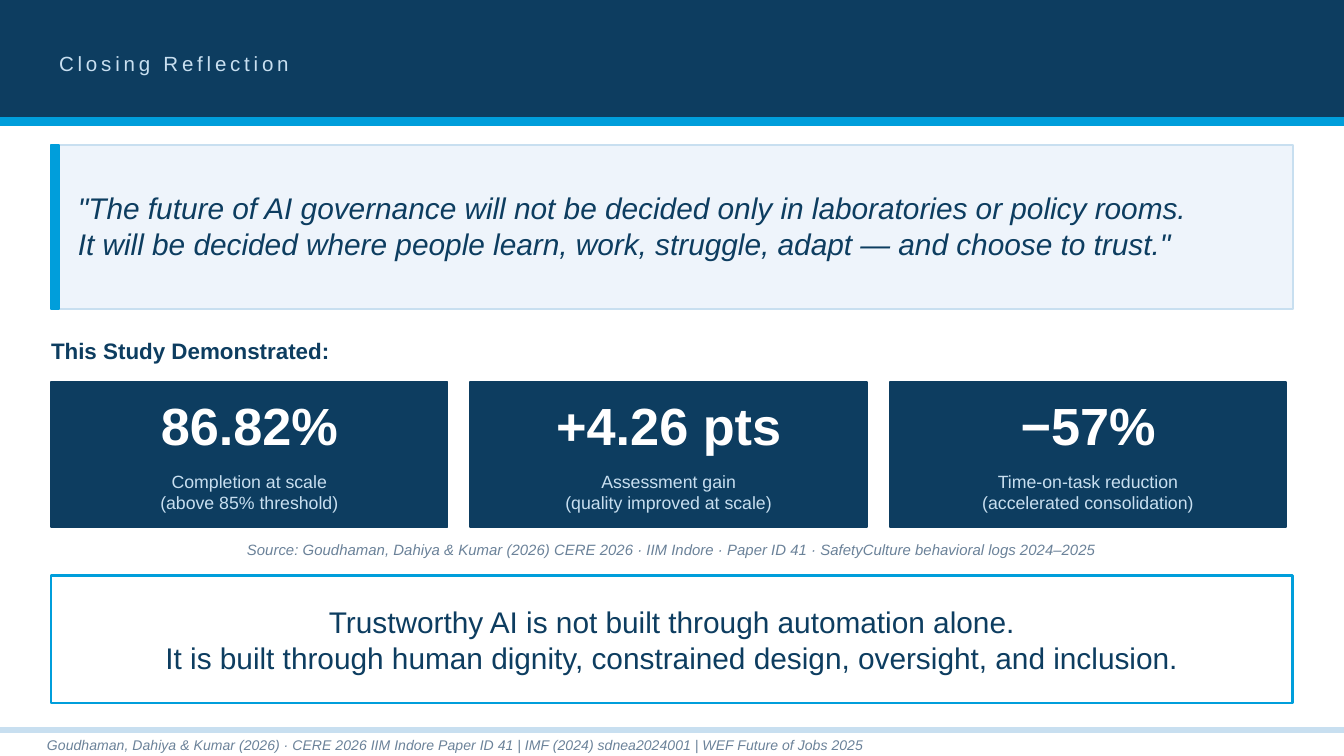
from dataclasses import dataclass

from pptx import Presentation
from pptx.dml.color import RGBColor
from pptx.enum.shapes import MSO_SHAPE
from pptx.enum.text import MSO_ANCHOR, PP_ALIGN
from pptx.util import Inches, Pt


@dataclass(frozen=True)
class Theme:
    font: str = "Arial"
    navy: str = "0D3D60"
    blue: str = "009EDB"
    pale: str = "C8DFF0"
    mist: str = "EEF4FB"
    white: str = "FFFFFF"
    slate: str = "6B8299"
    figure: float = 28
    statement: float = 16
    heading: float = 12
    title: float = 11
    label: float = 9.5
    source: float = 8
    footer: float = 7.5


class SlideBuilder:
    """Places elements on a grid of 100 columns, with square cells."""

    def __init__(self, presentation, theme):
        self.theme = theme
        self.cell = presentation.slide_width / 100
        self.slide = presentation.slides.add_slide(presentation.slide_layouts[6])

    def place(self, area):
        return [round(length * self.cell) for length in area]

    def box(self, area, fill, line=None, line_width=1):
        shape = self.slide.shapes.add_shape(MSO_SHAPE.RECTANGLE, *self.place(area))
        shape.shadow.inherit = False
        shape.fill.solid()
        shape.fill.fore_color.rgb = RGBColor.from_string(fill)
        shape.line.color.rgb = RGBColor.from_string(line or fill)
        shape.line.width = Pt(line_width)

    def text(self, area, lines, size, color, bold=False, italic=False,
             align=PP_ALIGN.LEFT, spacing=0):
        """Write one paragraph per line; spacing is the letter spacing in points."""
        frame = self.slide.shapes.add_textbox(*self.place(area)).text_frame
        frame.word_wrap = True
        frame.vertical_anchor = MSO_ANCHOR.MIDDLE
        frame.margin_left = frame.margin_top = frame.margin_right = frame.margin_bottom = 0
        frame.text = "\n".join(lines)
        for paragraph in frame.paragraphs:
            paragraph.alignment = align
            font = paragraph.font
            font.name, font.size = self.theme.font, Pt(size)
            font.bold, font.italic = bold, italic
            font.color.rgb = RGBColor.from_string(color)
            if spacing:
                for run in paragraph.runs:
                    run._r.get_or_add_rPr().set("spc", str(spacing * 100))

    def header(self, title):
        theme = self.theme
        self.box((0, 0, 100, 8.8), theme.navy)
        self.box((0, 8.8, 100, 0.55), theme.blue)
        self.text((4.4, 2.7, 64, 4), [title], theme.title, theme.pale, spacing=2)

    def quote(self, lines):
        theme = self.theme
        left, top, height = 3.8, 10.8, 12.2
        self.box((left, top, 92.4, height), theme.mist, theme.pale)
        self.box((left, top, 0.6, height), theme.blue)
        self.text((left + 2, top + 0.2, 89, height - 0.6), lines,
                  theme.statement, theme.navy, italic=True)

    def statistic_card(self, index, figure, label_lines):
        theme = self.theme
        width, gap, top = 29.5, 1.7, 28.4
        left = 3.8 + index * (width + gap)
        self.box((left, top, width, 10.85), theme.navy)
        self.text((left, top + 0.2, width, 6), [figure], theme.figure, theme.white,
                  bold=True, align=PP_ALIGN.CENTER)
        self.text((left, top + 6, width, 4.4), label_lines, theme.label, theme.pale,
                  align=PP_ALIGN.CENTER)

    def conclusion(self, lines):
        theme = self.theme
        area = (3.8, 42.82, 92.4, 9.5)
        self.box(area, theme.white, theme.blue, 1.5)
        self.text(area, lines, theme.statement, theme.navy, align=PP_ALIGN.CENTER)

    def footer(self, reference):
        theme = self.theme
        self.box((0, 54.2, 100, 0.3), theme.pale)
        self.text((3.5, 54.5, 93, 1.8), [reference], theme.footer, theme.slate, italic=True)


STATISTICS = [
    ("86.82%", ["Completion at scale", "(above 85% threshold)"]),
    ("+4.26 pts", ["Assessment gain", "(quality improved at scale)"]),
    ("−57%", ["Time-on-task reduction", "(accelerated consolidation)"]),
]


def main():
    presentation = Presentation()
    presentation.slide_width = Inches(10)
    presentation.slide_height = presentation.slide_width * 9 // 16
    theme = Theme()
    builder = SlideBuilder(presentation, theme)

    builder.header("Closing Reflection")
    builder.quote([
        '"The future of AI governance will not be decided only in laboratories or policy rooms.',
        'It will be decided where people learn, work, struggle, adapt — and choose to trust."',
    ])
    builder.text((3.8, 24.5, 92, 3.2), ["This Study Demonstrated:"],
                 theme.heading, theme.navy, bold=True)
    for index, (figure, label_lines) in enumerate(STATISTICS):
        builder.statistic_card(index, figure, label_lines)
    builder.text((3.8, 39.8, 92.4, 2.2),
                 ["Source: Goudhaman, Dahiya & Kumar (2026) CERE 2026 · IIM Indore · "
                  "Paper ID 41 · SafetyCulture behavioral logs 2024–2025"],
                 theme.source, theme.slate, italic=True, align=PP_ALIGN.CENTER)
    builder.conclusion([
        "Trustworthy AI is not built through automation alone.",
        "It is built through human dignity, constrained design, oversight, and inclusion.",
    ])
    builder.footer("Goudhaman, Dahiya & Kumar (2026) · CERE 2026 IIM Indore Paper ID 41 | "
                   "IMF (2024) sdnea2024001 | WEF Future of Jobs 2025")
    presentation.save("out.pptx")


if __name__ == "__main__":
    main()
